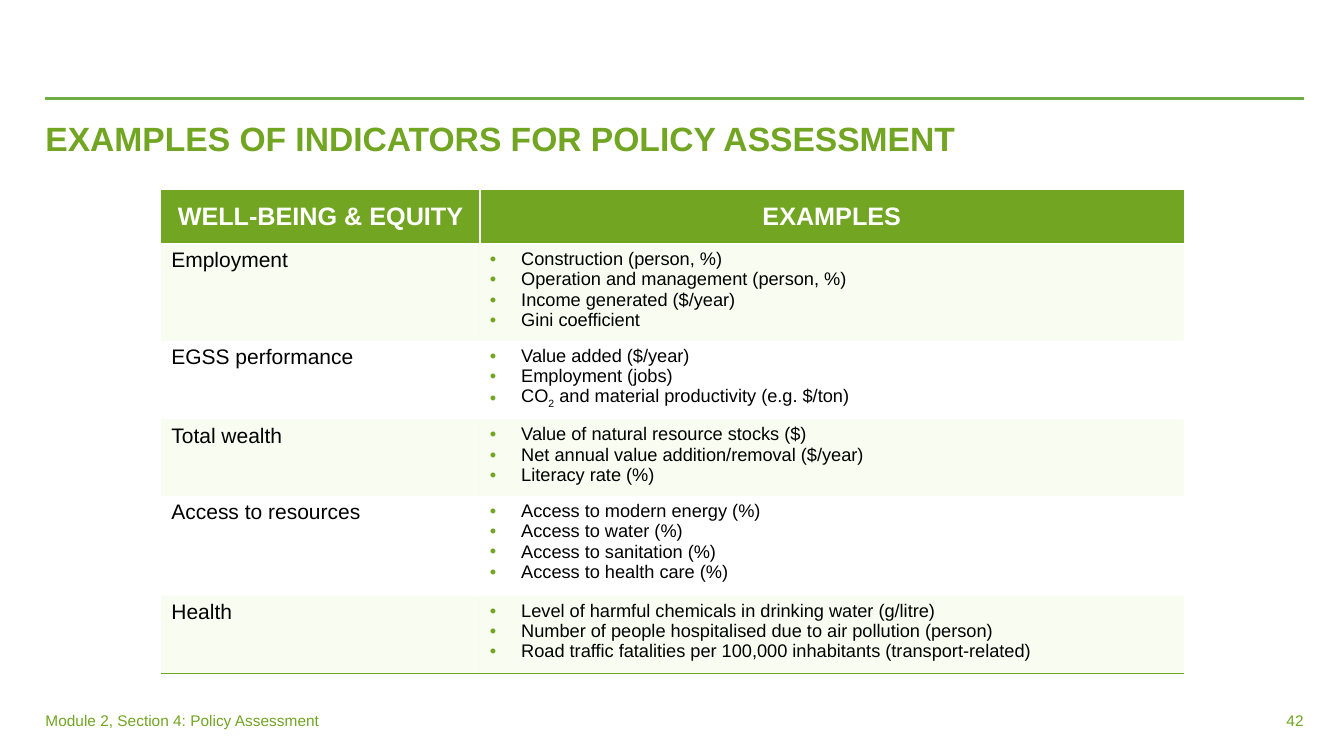
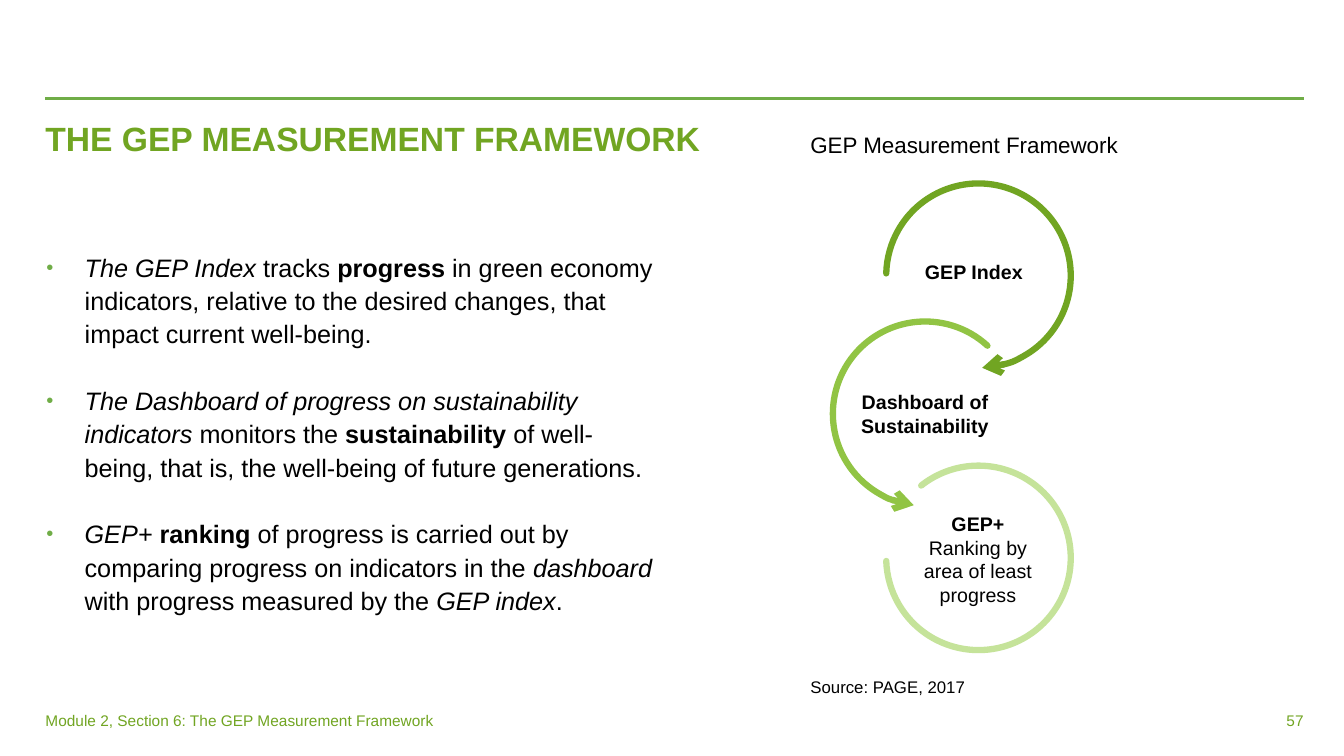
from dataclasses import dataclass
from typing import NamedTuple

from lxml.etree import SubElement
from pptx import Presentation
from pptx.dml.color import RGBColor
from pptx.enum.shapes import MSO_CONNECTOR as Connector, MSO_SHAPE as Preset
from pptx.enum.text import MSO_ANCHOR as Anchor, MSO_AUTO_SIZE as AutoSize, PP_ALIGN as Align
from pptx.oxml.ns import qn
from pptx.util import Inches, Pt

WIDTH, HEIGHT = Inches(13.33), Inches(7.5)
FONT = "Arial"
COLORS = {
    "green": "71A522", "rule": "70AD47", "middle": "91C444", "light": "C5E39A",
    "tint": "DCF2BC", "white": "FFFFFF", "black": "000000",
}
NO_TABLE_STYLE = "{2D5ABB26-0587-4C30-8999-92F81FD0307C}"
MARGIN = 3.38


class Box(NamedTuple):
    """A frame in percent of the slide's width and height."""
    left: float
    top: float
    width: float
    height: float

    def lengths(self) -> tuple:
        return (across(self.left), down(self.top), across(self.width), down(self.height))


class Words(NamedTuple):
    text: str
    bold: bool = False
    italic: bool = False
    baseline: int = 0


@dataclass
class TextStyle:
    size: float
    color: str = "black"
    align: Align = Align.LEFT
    spacing: float = 1.0


@dataclass
class Bullet:
    indent: float
    color: str
    percent: int = 100


@dataclass
class Indicator:
    name: str
    examples: list
    height: float


@dataclass
class Cycle:
    """A circular arc, clockwise in degrees from the right, and its label."""
    left: float
    top: float
    start: float
    end: float
    color: str
    arrow: str
    label: Box
    words: list
    wrap: bool = True


TITLE = TextStyle(24, "green", spacing=0.9)
BODY = TextStyle(18, spacing=1.1)
HEADER = TextStyle(18, "white", Align.CENTER)
FOOTER = TextStyle(11, "green")
FOOTER_NUMBER = TextStyle(11, "green", Align.RIGHT)
CYCLE_LABEL = TextStyle(14, align=Align.CENTER)
LIST_BULLET = Bullet(0.38, "rule", 80)
CELL_BULLET = Bullet(0.31, "green")

TABLE_BOX = Box(12, 25.07, 76.07, 64.13)
TABLE_COLUMNS = (23.71, 52.36)
HEADER_HEIGHT = 7.2
INDICATORS = [
    Indicator("Employment", [
        "Construction (person, %)", "Operation and management (person, %)",
        "Income generated ($/year)", "Gini coefficient"], 12.8),
    Indicator("EGSS performance", [
        "Value added ($/year)", "Employment (jobs)",
        [Words("CO"), Words("2", baseline=-25000),
         Words(" and material productivity (e.g. $/ton)")]], 10.4),
    Indicator("Total wealth", [
        "Value of natural resource stocks ($)",
        "Net annual value addition/removal ($/year)", "Literacy rate (%)"], 10.13),
    Indicator("Access to resources", [
        "Access to modern energy (%)", "Access to water (%)",
        "Access to sanitation (%)", "Access to health care (%)"], 13.2),
    Indicator("Health", [
        "Level of harmful chemicals in drinking water (g/litre)",
        "Number of people hospitalised due to air pollution (person)",
        "Road traffic fatalities per 100,000 inhabitants (transport-related)"], 10.27),
]

FRAMEWORK_POINTS = [
    [Words("The GEP Index ", italic=True), Words("tracks "), Words("progress", bold=True),
     Words(" in green economy indicators, relative to the desired changes, "
           "that impact current well-being.")],
    [Words("The Dashboard of progress on sustainability indicators ", italic=True),
     Words("monitors the "), Words("sustainability", bold=True),
     Words(" of well-being, that is, the well-being of future generations.")],
    [Words("GEP+ ", italic=True), Words("ranking ", bold=True),
     Words("of progress is carried out by comparing progress on indicators in the "),
     Words("dashboard ", italic=True), Words("with progress measured by the "),
     Words("GEP index", italic=True), Words(".")],
]
CYCLE_WIDTH, CYCLE_HEIGHT = 13.73, 24.4
CYCLES = [
    Cycle(61.97, 42.53, 97.1, 312.5, "middle", "headEnd", Box(62.94, 50.93, 11.78, 7.6),
          [[Words("Dashboard of Sustainability", bold=True)]]),
    Cycle(65.94, 24.27, 181.4, 87.7, "green", "tailEnd", Box(68.04, 33.73, 8.85, 4.53),
          [[Words("GEP Index", bold=True)]], wrap=False),
    Cycle(65.94, 61.6, 231.6, 178.1, "light", "", Box(67.22, 67.07, 11.1, 13.87),
          [[Words("GEP+", bold=True)], [Words("Ranking by area of least progress")]]),
]


def across(percent: float) -> int:
    return round(WIDTH * percent / 100)


def down(percent: float) -> int:
    return round(HEIGHT * percent / 100)


def rgb(name: str) -> RGBColor:
    return RGBColor.from_string(COLORS[name])


def add_bullet(paragraph, bullet: Bullet) -> None:
    properties = paragraph._p.get_or_add_pPr()
    properties.set("marL", str(Inches(bullet.indent)))
    properties.set("indent", str(-Inches(bullet.indent)))
    color = SubElement(properties, qn("a:buClr"))
    SubElement(color, qn("a:srgbClr"), val=COLORS[bullet.color])
    SubElement(properties, qn("a:buSzPct"), val=str(bullet.percent * 1000))
    SubElement(properties, qn("a:buFont"), typeface=FONT)
    SubElement(properties, qn("a:buChar"), char="•")


def write(frame, paragraphs: list, style: TextStyle, bullet: Bullet | None = None,
          gap: float = 0) -> None:
    """Fill a text frame; each paragraph is a string or a list of Words."""
    for index, content in enumerate(paragraphs):
        paragraph = frame.add_paragraph() if index else frame.paragraphs[0]
        if bullet:
            add_bullet(paragraph, bullet)
        paragraph.alignment = style.align
        paragraph.line_spacing = style.spacing
        paragraph.space_before = Pt(gap if index else 0)
        for words in [Words(content)] if isinstance(content, str) else content:
            run = paragraph.add_run()
            run.text = words.text
            font = run.font
            font.name, font.size = FONT, Pt(style.size)
            font.bold, font.italic = words.bold, words.italic
            font.color.rgb = rgb(style.color)
            if words.baseline:
                run._r.get_or_add_rPr().set("baseline", str(words.baseline))


def prepare_frame(frame, left: float = 0.1, right: float = 0.1, anchor=Anchor.TOP,
                  wrap: bool = True) -> None:
    frame.auto_size = AutoSize.NONE
    frame.word_wrap = wrap
    frame.vertical_anchor = anchor
    frame.margin_left, frame.margin_right = Inches(left), Inches(right)
    frame.margin_top = frame.margin_bottom = Inches(0.05)


def add_text(slide, box: Box, paragraphs: list, style: TextStyle, **frame_options) -> None:
    frame = slide.shapes.add_textbox(*box.lengths()).text_frame
    prepare_frame(frame, **frame_options)
    write(frame, paragraphs, style)


def fill_placeholder(placeholder, box: Box, paragraphs: list, style: TextStyle,
                     bullet: Bullet | None = None, gap: float = 0) -> None:
    placeholder.left, placeholder.top, placeholder.width, placeholder.height = box.lengths()
    prepare_frame(placeholder.text_frame, 0, 0)
    write(placeholder.text_frame, paragraphs, style, bullet, gap)


def add_framed_slide(presentation, layout: int, title: str, title_width: float,
                     footer: str, number: int):
    """Add a slide with the rule, title, footer and number all slides share."""
    slide = presentation.slides.add_slide(presentation.slide_layouts[layout])
    rule = slide.shapes.add_connector(Connector.STRAIGHT, across(MARGIN), down(13.07),
                                      across(97), down(13.07))
    rule.line.color.rgb = rgb("rule")
    rule.line.width = Pt(2)
    SubElement(rule._element.spPr, qn("a:effectLst"))
    fill_placeholder(slide.shapes.title, Box(MARGIN, 15.47, title_width, 6.27),
                     [[Words(title, bold=True)]], TITLE)
    add_text(slide, Box(MARGIN, 92.67, 30.08, 5.33), [footer], FOOTER,
             left=0, anchor=Anchor.MIDDLE)
    add_text(slide, Box(88.67, 92.67, 8.33, 5.33), [str(number)], FOOTER_NUMBER,
             right=0, anchor=Anchor.MIDDLE)
    return slide


def add_border(cell, side: str, color: str) -> None:
    """Draw one side (L, R, T or B); call before the cell is filled."""
    line = SubElement(cell._tc.get_or_add_tcPr(), qn(f"a:ln{side}"), w=str(Pt(1)))
    SubElement(SubElement(line, qn("a:solidFill")), qn("a:srgbClr"), val=COLORS[color])


def fill_cell(cell, color: str, opacity: int = 100) -> None:
    cell.fill.solid()
    cell.fill.fore_color.rgb = rgb(color)
    if opacity < 100:
        value = cell._tc.tcPr.find(f"{qn('a:solidFill')}/{qn('a:srgbClr')}")
        SubElement(value, qn("a:alpha"), val=str(opacity * 1000))


def add_indicator_table(slide) -> None:
    table = slide.shapes.add_table(len(INDICATORS) + 1, len(TABLE_COLUMNS),
                                   *TABLE_BOX.lengths()).table
    table._tbl.tblPr.find(qn("a:tableStyleId")).text = NO_TABLE_STYLE
    table.horz_banding = False
    for column, width in zip(table.columns, TABLE_COLUMNS):
        column.width = across(width)
    heights = [HEADER_HEIGHT] + [indicator.height for indicator in INDICATORS]
    for row, height in zip(table.rows, heights):
        row.height = down(height)

    for column, heading in enumerate(("WELL-BEING & EQUITY", "EXAMPLES")):
        cell = table.cell(0, column)
        cell.vertical_anchor = Anchor.MIDDLE
        for side in ("LTB" if column else "RTB"):
            add_border(cell, side, "white")
        fill_cell(cell, "green")
        write(cell.text_frame, [[Words(heading, bold=True)]], HEADER)

    for row, indicator in enumerate(INDICATORS, start=1):
        name, examples = table.cell(row, 0), table.cell(row, 1)
        for cell in (name, examples):
            if row == len(INDICATORS):
                add_border(cell, "B", "green")
            if row % 2:
                fill_cell(cell, "tint", 20)
            else:
                cell.fill.background()
        write(name.text_frame, [indicator.name], TextStyle(15))
        write(examples.text_frame, indicator.examples, TextStyle(13), CELL_BULLET)


def add_cycle(slide, cycle: Cycle) -> None:
    box = Box(cycle.left, cycle.top, CYCLE_WIDTH, CYCLE_HEIGHT)
    arc = slide.shapes.add_shape(Preset.ARC, *box.lengths())
    arc.shadow.inherit = False
    arc.fill.background()
    for index, angle in enumerate((cycle.start, cycle.end)):
        arc.adjustments[index] = angle * 0.6
    arc.line.color.rgb = rgb(cycle.color)
    arc.line.width = Pt(4.5)
    line = arc.line._get_or_add_ln()
    line.set("cap", "rnd")
    if cycle.arrow:
        SubElement(line, qn(f"a:{cycle.arrow}"), type="arrow")
    add_text(slide, cycle.label, cycle.words, CYCLE_LABEL, wrap=cycle.wrap)


def add_framework(slide) -> None:
    fill_placeholder(slide.placeholders[1], Box(3.45, 32.27, 45.39, 52.27),
                     FRAMEWORK_POINTS, BODY, LIST_BULLET, gap=24)
    add_text(slide, Box(59.56, 16.67, 24.68, 4.93), ["GEP Measurement Framework"],
             TextStyle(16), wrap=False)
    for cycle in CYCLES:
        add_cycle(slide, cycle)
    add_text(slide, Box(59.56, 88.8, 29.26, 4), ["Source: PAGE, 2017"], TextStyle(12))


def main() -> None:
    presentation = Presentation()
    presentation.slide_width, presentation.slide_height = WIDTH, HEIGHT
    add_indicator_table(add_framed_slide(
        presentation, 5, "EXAMPLES OF INDICATORS FOR POLICY ASSESSMENT", 76.07,
        "Module 2, Section 4: Policy Assessment", 42))
    add_framework(add_framed_slide(
        presentation, 1, "THE GEP MEASUREMENT FRAMEWORK", 51.09,
        "Module 2, Section 6: The GEP Measurement Framework", 57))
    presentation.save("out.pptx")


if __name__ == "__main__":
    main()
